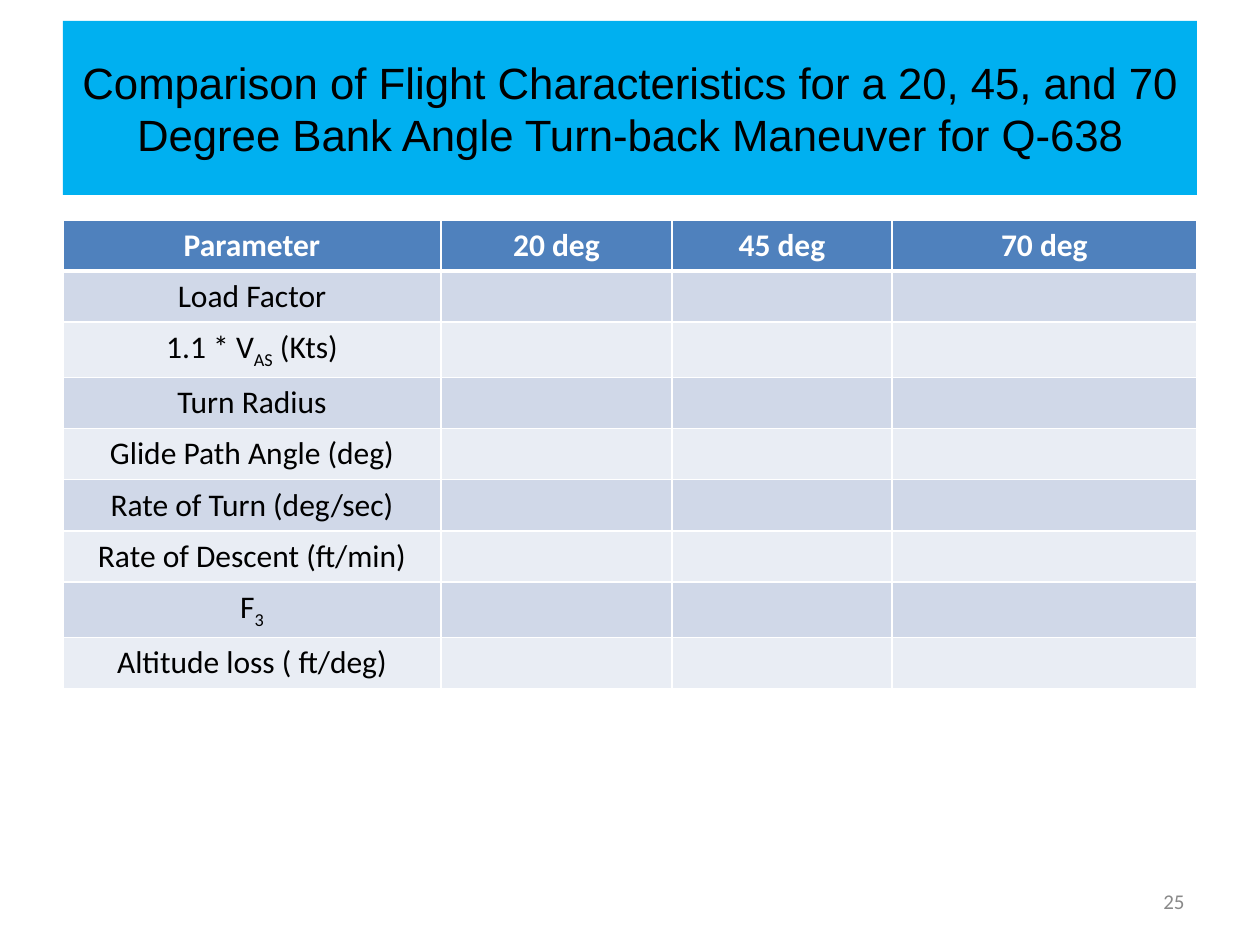
from dataclasses import dataclass

from lxml.etree import SubElement
from pptx import Presentation
from pptx.dml.color import RGBColor
from pptx.enum.shapes import MSO_SHAPE
from pptx.enum.text import MSO_ANCHOR, PP_ALIGN
from pptx.oxml.ns import qn
from pptx.util import Emu, Pt


@dataclass(frozen=True)
class Theme:
    heading_font: str = "Arial"
    body_font: str = "Calibri"
    title_size: int = 25
    table_size: int = 18
    number_size: int = 12
    banner: str = "00B0F0"
    header: str = "4F81BD"
    bands: tuple = ("D0D8E8", "E9EDF4")
    dark: str = "000000"
    light: str = "FFFFFF"
    muted: str = "898989"
    thin: int = 1
    thick: int = 3


THEME = Theme()
PX_PER_INCH = 126
LEFT, WIDTH = 63, 1134

TITLE = ("Comparison of Flight Characteristics for a 20, 45, and 70 "
         "Degree Bank Angle Turn-back Maneuver for Q-638")
HEADINGS = ("Parameter", "20 deg", "45 deg", "70 deg")
COLUMN_WIDTHS = (378, 231, 220, 305)
ROW_HEIGHT = 51
# Each label is a tuple of spans; every second span is a subscript
PARAMETERS = (
    ("Load Factor",),
    ("1.1 * V", "AS", " (Kts)"),
    ("Turn Radius",),
    ("Glide Path Angle (deg)",),
    ("Rate of Turn (deg/sec)",),
    ("Rate of Descent (ft/min)",),
    ("F", "3"),
    ("Altitude loss ( ft/deg)",),
)


def px(length):
    return Emu(round(length * 914400 / PX_PER_INCH))


def write(frame, spans, font, size, color, align=PP_ALIGN.CENTER, bold=False):
    para = frame.paragraphs[0]
    para.alignment = align
    para.font.name = font
    para.font.size = Pt(size)
    para.font.bold = bold
    para.font.color.rgb = RGBColor.from_string(color)
    for index, words in enumerate(spans):
        span = para.add_run()
        span.text = words
        if index % 2:
            span._r.get_or_add_rPr().set("baseline", "-25000")


def add_banner(page):
    box = page.shapes.add_shape(MSO_SHAPE.RECTANGLE, px(LEFT), px(21), px(WIDTH), px(174))
    box.shadow.inherit = False
    box.fill.solid()
    box.fill.fore_color.rgb = RGBColor.from_string(THEME.banner)
    box.line.fill.background()
    box.text_frame.word_wrap = True
    box.text_frame.vertical_anchor = MSO_ANCHOR.MIDDLE
    write(box.text_frame, (TITLE,), THEME.heading_font, THEME.title_size, THEME.dark)


def style_cell(cell, fill, top, bottom):
    # Borders precede the fill in the cell properties
    properties = cell._tc.get_or_add_tcPr()
    for side, points in zip("LRTB", (THEME.thin, THEME.thin, top, bottom)):
        line = SubElement(properties, qn(f"a:ln{side}"), w=str(Pt(points)))
        SubElement(SubElement(line, qn("a:solidFill")), qn("a:srgbClr"), val=THEME.light)
    cell.fill.solid()
    cell.fill.fore_color.rgb = RGBColor.from_string(fill)


def add_comparison(page):
    row_count = len(PARAMETERS) + 1
    table = page.shapes.add_table(row_count, len(HEADINGS), px(LEFT), px(220),
                                  px(WIDTH), px(ROW_HEIGHT * row_count)).table
    for column, width in zip(table.columns, COLUMN_WIDTHS):
        column.width = px(width)

    # Header row and banded body rows
    for index, row in enumerate(table.rows):
        row.height = px(ROW_HEIGHT)
        fill = THEME.bands[(index - 1) % 2] if index else THEME.header
        top = THEME.thick if index == 1 else THEME.thin
        bottom = THEME.thick if index == 0 else THEME.thin
        for cell in row.cells:
            style_cell(cell, fill, top, bottom)

    # Headings across the top, parameters down the first column
    for column, heading in enumerate(HEADINGS):
        write(table.cell(0, column).text_frame, (heading,), THEME.body_font,
              THEME.table_size, THEME.light, bold=True)
    for row, spans in enumerate(PARAMETERS, start=1):
        write(table.cell(row, 0).text_frame, spans, THEME.body_font,
              THEME.table_size, THEME.dark)


def add_page_number(page):
    box = page.shapes.add_textbox(px(903), px(876), px(294), px(50))
    box.text_frame.word_wrap = True
    box.text_frame.vertical_anchor = MSO_ANCHOR.MIDDLE
    write(box.text_frame, ("25",), THEME.body_font, THEME.number_size,
          THEME.muted, PP_ALIGN.RIGHT)


def main():
    deck = Presentation()
    deck.slide_width, deck.slide_height = px(1260), px(945)
    page = deck.slides.add_slide(deck.slide_layouts[6])
    add_banner(page)
    add_comparison(page)
    add_page_number(page)
    deck.save("out.pptx")


if __name__ == "__main__":
    main()
